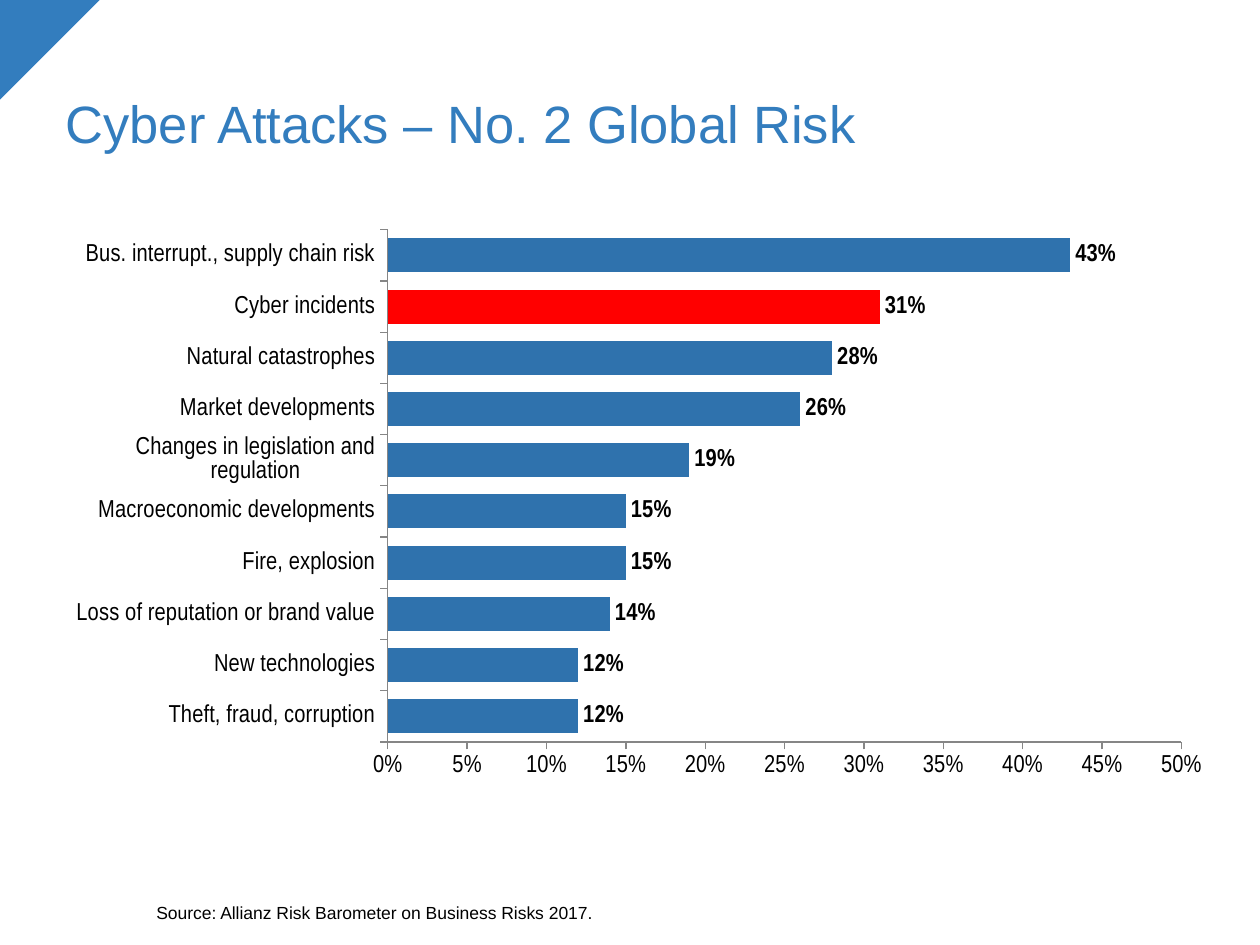
from pptx import Presentation, util as u
from pptx.chart.data import CategoryChartData
from pptx.dml.color import RGBColor
from pptx.enum import chart as charts, shapes, text
from pptx.oxml import parse_xml
from pptx.oxml.ns import nsdecls

BLUE, BAR, RED, BLACK, GREY = "337DBE", "2F72AD", "FF0000", "000000", "868686"
RISKS = [
    ("Bus. interrupt., supply chain risk", 0.43),
    ("Cyber incidents", 0.31),
    ("Natural catastrophes", 0.28),
    ("Market developments", 0.26),
    ("Changes in legislation and regulation", 0.19),
    ("Macroeconomic developments", 0.15),
    ("Fire, explosion", 0.15),
    ("Loss of reputation or brand value", 0.14),
    ("New technologies", 0.12),
    ("Theft, fraud, corruption", 0.12),
]
HIGHLIGHT = "Cyber incidents"


def colour(value):
    return RGBColor.from_string(value)


def set_all(target, values):
    for name, value in values.items():
        setattr(target, name, value)


def set_font(font, size, hex_colour=BLACK, name="Arial", bold=False):
    set_all(font, {"size": u.Pt(size), "name": name, "bold": bold})
    font.color.rgb = colour(hex_colour)


def paint(fill, hex_colour):
    fill.solid()
    fill.fore_color.rgb = colour(hex_colour)


def place(shape, box):
    left, top, width, height = map(u.Inches, box)
    set_all(shape, {"left": left, "top": top, "width": width, "height": height})


def add_corner(slide, box):
    corner = slide.shapes.add_shape(
        shapes.MSO_SHAPE.RIGHT_TRIANGLE, *map(u.Inches, box))
    corner.rotation = 90
    corner.shadow.inherit = False
    paint(corner.fill, BLUE)
    corner.line.fill.background()


def fill_placeholder(shape, box, words, size, hex_colour, insets):
    """Move a placeholder and set one bottom-anchored line without a bullet."""
    place(shape, box)
    frame = shape.text_frame
    side, end = map(u.Inches, insets)
    set_all(frame, {
        "text": words, "word_wrap": True, "auto_size": text.MSO_AUTO_SIZE.NONE,
        "vertical_anchor": text.MSO_ANCHOR.BOTTOM,
        "margin_left": side, "margin_right": side,
        "margin_top": end, "margin_bottom": end})
    paragraph = frame.paragraphs[0]
    properties = paragraph._p.get_or_add_pPr()
    properties.set("marL", "0")
    properties.set("indent", "0")
    properties.append(parse_xml(f"<a:buNone {nsdecls('a')}/>"))
    set_all(paragraph, {"alignment": text.PP_ALIGN.LEFT, "line_spacing": 0.9,
                        "space_before": u.Pt(0)})
    set_font(paragraph.runs[0].font, size, hex_colour)


def fix_plot_area(chart, box):
    """Pin the inner plot area to shares of the chart's size."""
    sizes = "".join(f'<c:{name} val="{share}"/>' for name, share in zip("xywh", box))
    layout = parse_xml(
        f'<c:layout {nsdecls("c")}><c:manualLayout><c:layoutTarget val="inner"/>'
        f'<c:xMode val="edge"/><c:yMode val="edge"/>{sizes}'
        '</c:manualLayout></c:layout>')
    plot_area = chart._chartSpace.chart.plotArea
    for old in plot_area.xpath("c:layout"):
        plot_area.remove(old)
    plot_area.insert(0, layout)


def add_risk_chart(slide, box):
    rows = RISKS[::-1]
    data = CategoryChartData(number_format="0%")
    data.categories = [name for name, _ in rows]
    data.add_series("Series 1", [share for _, share in rows])
    chart = slide.shapes.add_chart(
        charts.XL_CHART_TYPE.BAR_CLUSTERED, *map(u.Inches, box), data).chart
    set_all(chart, {"has_legend": False, "has_title": False})
    set_font(chart.font, 16)
    fix_plot_area(chart, (0.282, 0.05, 0.7, 0.833))

    for axis in (chart.category_axis, chart.value_axis):
        set_all(axis, {"has_major_gridlines": False,
                       "major_tick_mark": charts.XL_TICK_MARK.OUTSIDE,
                       "minor_tick_mark": charts.XL_TICK_MARK.NONE})
        axis.format.line.color.rgb = colour(GREY)
        axis.format.line.width = u.Pt(0.75)
        set_font(axis.tick_labels.font, 14, name="Arial Narrow")
    set_all(chart.value_axis,
            {"minimum_scale": 0, "maximum_scale": 0.5, "major_unit": 0.05})
    set_all(chart.value_axis.tick_labels,
            {"number_format": "0%", "number_format_is_linked": False})

    plot = chart.plots[0]
    set_all(plot, {"gap_width": 50, "vary_by_categories": False,
                   "has_data_labels": True})
    set_all(plot.data_labels, {
        "show_value": True, "number_format": "0%", "number_format_is_linked": False,
        "position": charts.XL_LABEL_POSITION.OUTSIDE_END})
    set_font(plot.data_labels.font, 14, name="Arial Narrow", bold=True)
    series = plot.series[0]
    paint(series.format.fill, BAR)
    highlighted = [name for name, _ in rows].index(HIGHLIGHT)
    paint(series.points[highlighted].format.fill, RED)


def main():
    presentation = Presentation()
    set_all(presentation, {"slide_width": u.Inches(10), "slide_height": u.Inches(7.5)})
    slide = presentation.slides.add_slide(presentation.slide_layouts[1])
    title, source = slide.placeholders
    add_corner(slide, (-0.01, 0, 0.8, 0.8))
    fill_placeholder(title, (0.42, 0.25, 9.25, 1.04),
                     "Cyber Attacks – No. 2 Global Risk", 30, BLUE, (0.1, 0.06))
    fill_placeholder(source, (1.24, 6.88, 8.4, 0.45),
                     "Source: Allianz Risk Barometer on Business Risks 2017.",
                     10, BLACK, (0, 0))
    add_risk_chart(slide, (0.54, 1.58, 9, 4.88))
    presentation.save("out.pptx")


if __name__ == "__main__":
    main()
